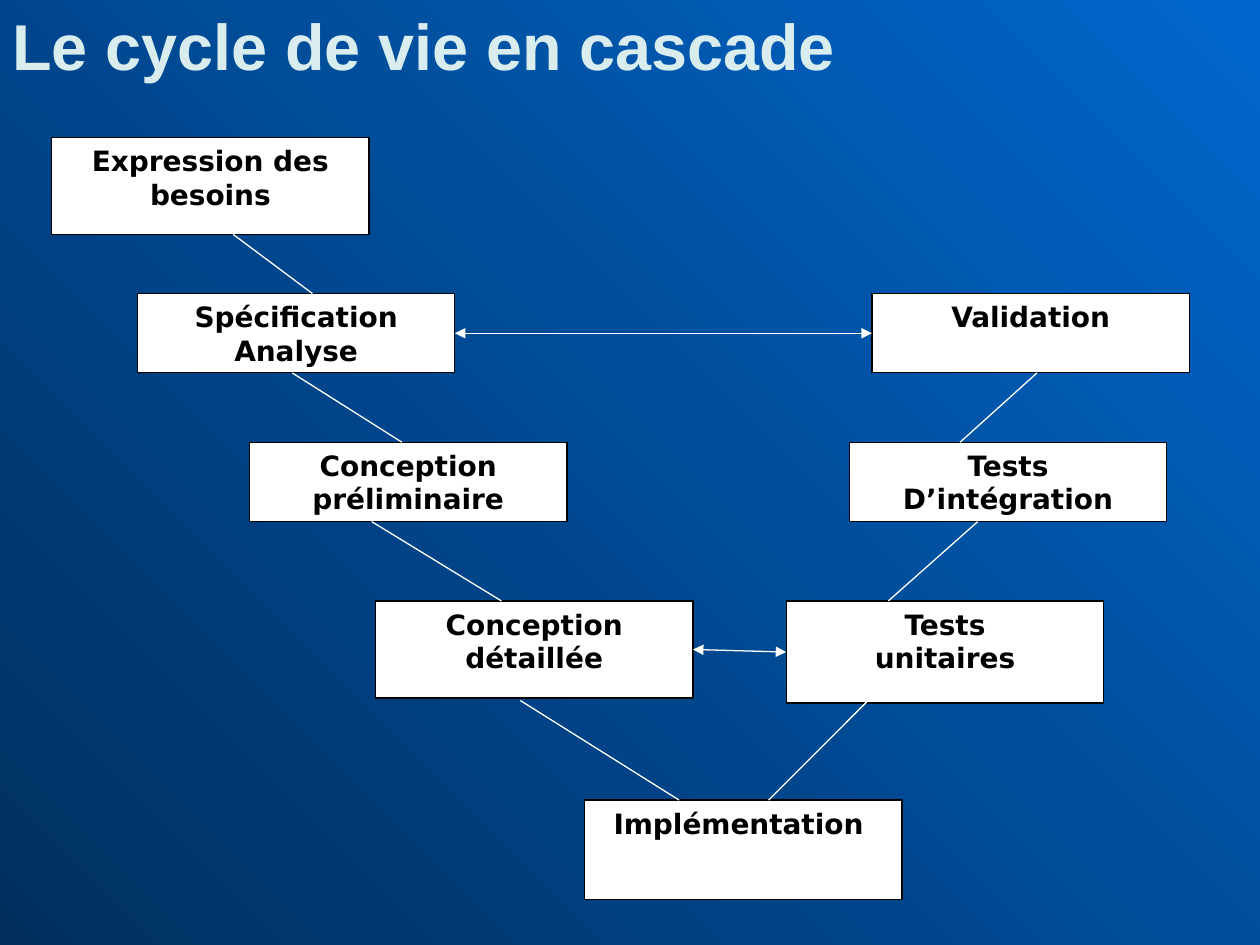
from lxml import etree
from pptx import Presentation
from pptx.dml.color import RGBColor
from pptx.enum.shapes import MSO_CONNECTOR as CONN, MSO_SHAPE as SHAPE
from pptx.enum.text import MSO_ANCHOR as ANCHOR, MSO_AUTO_SIZE as AUTO, PP_ALIGN as ALIGN
from pptx.oxml.ns import qn
from pptx.util import Inches, Pt


def rgb(color):
    return RGBColor.from_string(color)


def write(sp, text, size=16, font="DejaVu Sans", color="000000", align=ALIGN.CENTER):
    tf = sp.text_frame
    tf.word_wrap = True
    tf.vertical_anchor = ANCHOR.TOP
    for i, line in enumerate(text.split("\n")):
        p = tf.add_paragraph() if i else tf.paragraphs[0]
        p.alignment = align
        r = p.add_run()
        r.text = line
        r.font.size = Pt(size)
        r.font.name = font
        r.font.bold = True
        r.font.color.rgb = rgb(color)


prs = Presentation()
prs.slide_width, prs.slide_height = Inches(10), Inches(7.5)
COL, ROW = prs.slide_width / 10, prs.slide_height / 7.5
s = prs.slides.add_slide(prs.slide_layouts[6])

bg = s.background.fill
bg.gradient()
bg.gradient_angle = 45
for stop, pos, color in zip(bg.gradient_stops, (0, 1), ("002F5E", "0066CC")):
    stop.position = pos
    stop.color.rgb = rgb(color)

title = s.shapes.add_textbox(0, 0, prs.slide_width, int(0.72 * ROW))
write(title, "Le cycle de vie en cascade", size=37, font="Arial", color="D9EDEF", align=ALIGN.LEFT)
title.text_frame.auto_size = AUTO.SHAPE_TO_FIT_TEXT

BOX_W = 2.52
Y1, Y2, Y3, Y4, Y5 = 1.09, 2.33, 3.51, 4.77, 6.35
LOW, TALL = 0.63, 0.77
steps = [
    ("Expression des besoins", 0.41, Y1, TALL),
    ("Spécification\nAnalyse", 1.09, Y2, LOW),
    ("Conception\npréliminaire", 1.98, Y3, LOW),
    ("Conception\ndétaillée", 2.98, Y4, TALL),
    ("Implémentation ", 4.64, Y5, 0.79),
    ("Tests\nunitaires", 6.24, Y4, 0.81),
    ("Tests\nD’intégration", 6.74, Y3, LOW),
    ("Validation", 6.92, Y2, LOW),
]
boxes = {}
for text, x, y, h in steps:
    sp = s.shapes.add_shape(SHAPE.RECTANGLE, int(x * COL), int(y * ROW), int(BOX_W * COL), int(h * ROW))
    sp.shadow.inherit = False
    sp.fill.solid()
    sp.fill.fore_color.rgb = rgb("FFFFFF")
    sp.line.color.rgb = rgb("000000")
    sp.line.width = Pt(0.75)
    write(sp, text)
    boxes[text] = sp

links = [
    (1.85, Y1 + TALL, 2.48, Y2),
    (2.32, Y2 + LOW, 3.19, Y3),
    (2.95, Y3 + LOW, 3.98, Y4),
    (4.13, 5.56, 5.39, Y5),
    (6.1, Y5, 6.89, 5.56),
    (7.76, Y3 + LOW, 7.05, Y4),
    (8.23, Y2 + LOW, 7.62, Y3),
]
checks = [
    ("Spécification\nAnalyse", "Validation"),
    ("Conception\ndétaillée", "Tests\nunitaires"),
]
lines = []
for x1, y1, x2, y2 in links:
    ends = int(x1 * COL), int(y1 * ROW), int(x2 * COL), int(y2 * ROW)
    lines.append((s.shapes.add_connector(CONN.STRAIGHT, *ends), False))
for design, test in checks:
    cx = s.shapes.add_connector(CONN.STRAIGHT, 0, 0, 0, 0)
    cx.begin_connect(boxes[design], 3)
    cx.end_connect(boxes[test], 1)
    lines.append((cx, True))

for cx, arrows in lines:
    cx.line.color.rgb = rgb("FFFFFF")
    cx.line.width = Pt(0.75)
    if arrows:
        for end in ("a:headEnd", "a:tailEnd"):
            etree.SubElement(cx.line._get_or_add_ln(), qn(end), type="triangle")
    etree.SubElement(cx._element.spPr, qn("a:effectLst"))

prs.save("out.pptx")
